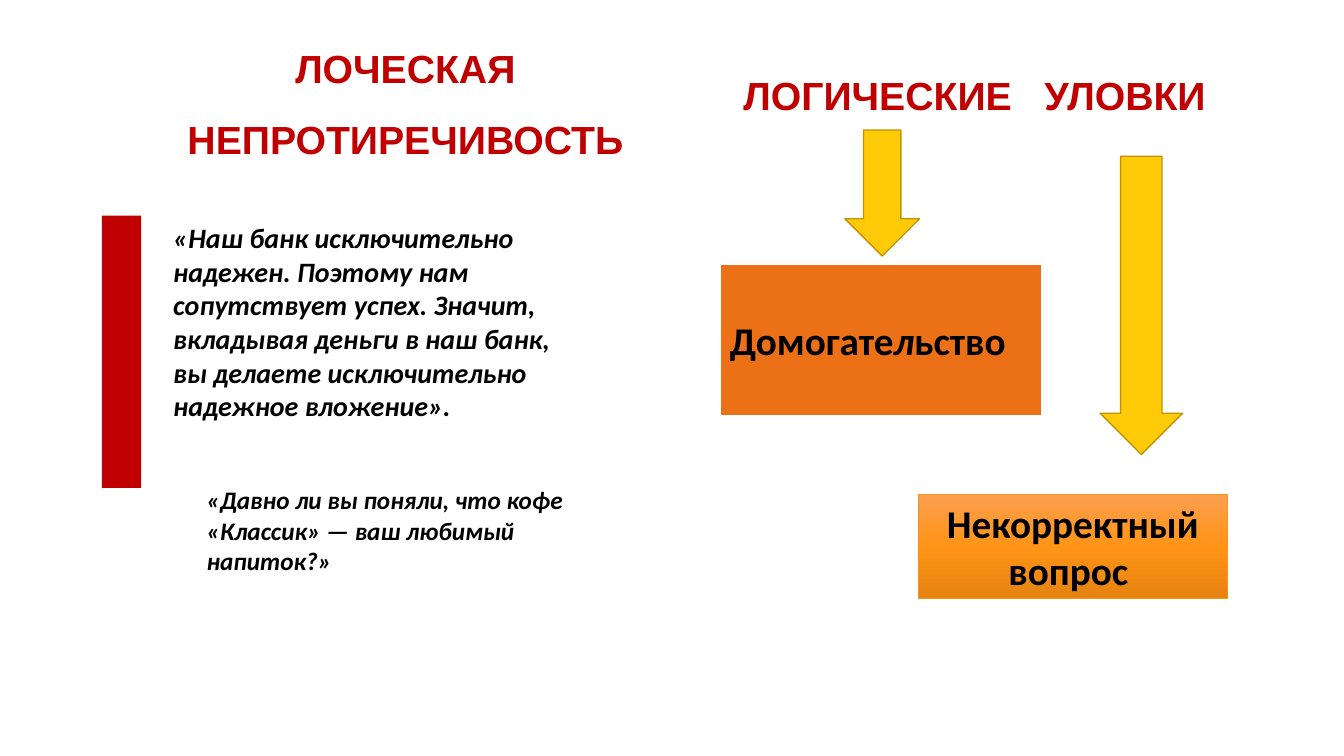
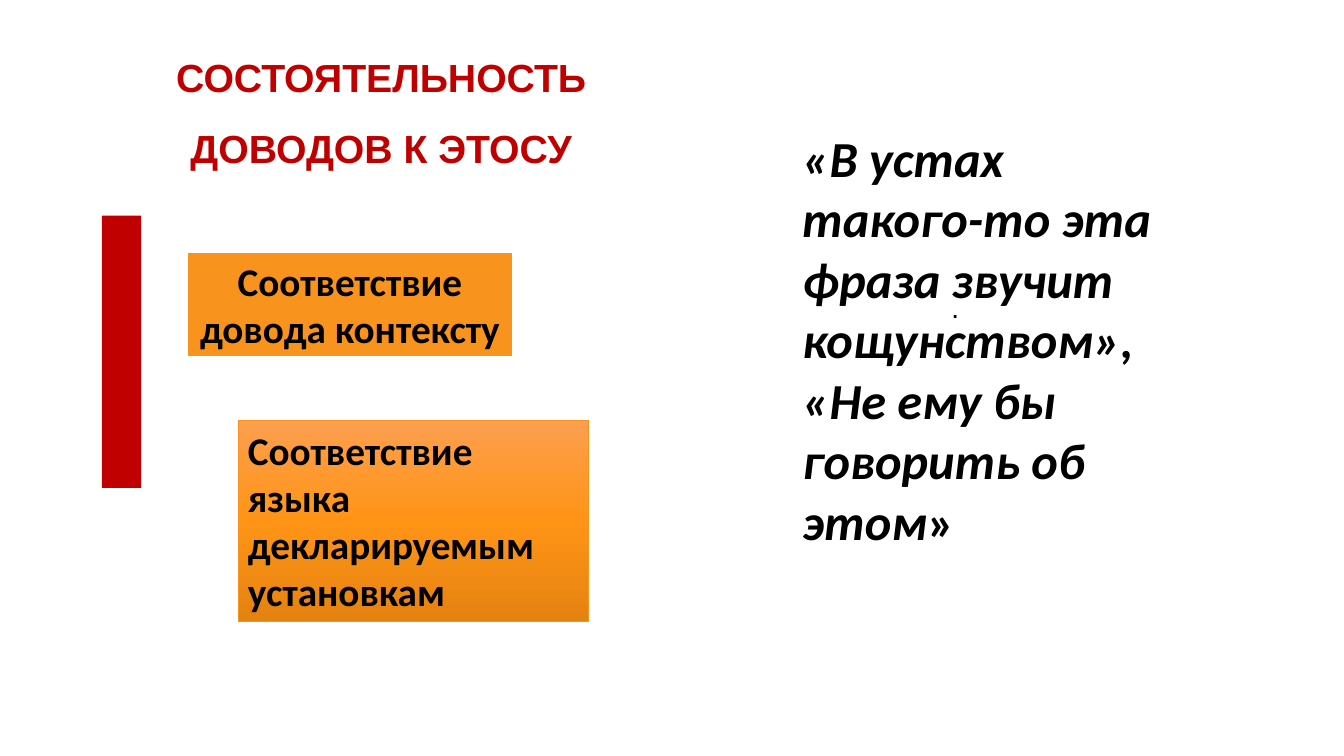
"""Build two slides on logical tricks and on arguments to ethos."""
import copy

import pptx
import pptx.dml.color
import pptx.enum.shapes
import pptx.enum.text
import pptx.oxml.ns
import pptx.util

SHAPE = pptx.enum.shapes.MSO_SHAPE
ALIGN = pptx.enum.text.PP_ALIGN
ANCHOR = pptx.enum.text.MSO_ANCHOR

THEME = {
    "red": "C00000", "black": "000000", "white": "FFFFFF",
    "orange": "F8931D", "deep": "EC7016",
    "gold": "FFCA08", "gold_edge": "BD9506",
    "gradient": ("FC9F4F", "FF9416", "E58311"),
    "head_font": "Arial", "body_font": "Calibri",
    "head": 28, "label": 28, "quote": 20, "small": 18, "large": 36,
}
CELL = 0.1
BAR = (10.1, 21.4, 3.9, 27)
WORD_GAP = 15.6

HEAD = dict(size="head", font="head_font", color="red", align=ALIGN.CENTER)
LABEL = dict(size="label", align=ALIGN.CENTER)
QUOTE = dict(italic=True)
GLOSSY = dict(fill="gradient", line="orange", width=0.5)
FLAT = dict(line="white", width=1.5)
ARROW = dict(kind=SHAPE.DOWN_ARROW, fill="gold", line="gold_edge", width=1)

SLIDES = [
    {
        "title": ("ЛОЧЕСКАЯ НЕПРОТИРЕЧИВОСТЬ", (15.7, 3.8, 49, 12.8)),
        "shapes": [
            ((91.1, 49, 30.6, 10.4), GLOSSY, "Некорректный вопрос ", LABEL),
            ((83.8, 12.9, 7.4, 12.5), ARROW, None, None),
            ((71.4, 26.2, 32, 15.1), dict(FLAT, fill="deep"),
             ["Домогате", ("л", {"italic": True}), "ьство"], dict(LABEL, align=ALIGN.LEFT)),
            ((109.1, 15.5, 8.2, 29.6), ARROW, None, None),
        ],
        "texts": [
            ((71.4, 6.6, 50.5, 5.7),
             ["ЛОГИЧЕСКИЕ", (" ", {"spacing": WORD_GAP}), "УЛОВКИ"], HEAD),
            ((16.2, 21.4, 42.3, 21.2),
             "«Наш банк исключительно надежен. Поэтому нам сопутствует успех. Значит, "
             "вкладывая деньги в наш банк, вы делаете исключительно надежное вложение».",
             dict(QUOTE, size="quote")),
            ((19.5, 47.6, 38.2, 10.1),
             "«Давно ли вы поняли, что кофе «Классик» — ваш любимый напиток?»",
             dict(QUOTE, size="small")),
        ],
    },
    {
        "title": ("СОСТОЯТЕЛЬНОСТЬ ДОВОДОВ К ЭТОСУ", (13.3, 4.4, 49, 13.1)),
        "shapes": [
            ((18.5, 25, 32.4, 10.4), dict(FLAT, fill="orange"),
             "Соответствие довода контексту", LABEL),
            ((23.6, 41.7, 34.8, 19.9), GLOSSY,
             "Соответствие языка декларируемым установкам", dict(LABEL, align=ALIGN.LEFT)),
        ],
        "texts": [
            ((68.6, 28.3, 52.3, 4.4), ".",
             dict(size="quote", font="head_font", bold=False, align=ALIGN.CENTER)),
            ((78.6, 12.1, 38.9, 43.4),
             ["«В устах такого-то эта фраза звучит кощунством», «Не ему бы говорить об этом",
              ("»", {"italic": False})], dict(QUOTE, size="large")),
        ],
    },
]


def rgb(name):
    return pptx.dml.color.RGBColor.from_string(THEME.get(name, name))


def grid(box):
    return [pptx.util.Inches(round(n * CELL, 2)) for n in box]


def write(sp, text, size, font="body_font", color="black", bold=True, italic=False,
          align=ALIGN.LEFT, anchor=ANCHOR.TOP, spacing=None):
    tf = sp.text_frame
    tf.word_wrap = True
    tf.auto_size = pptx.enum.text.MSO_AUTO_SIZE.NONE
    tf.vertical_anchor = anchor
    p = tf.paragraphs[0]
    p.alignment = align
    p.line_spacing = spacing
    for part in [text] if isinstance(text, str) else text:
        words, change = (part, {}) if isinstance(part, str) else part
        r = p.add_run()
        r.text = words
        r.font.name = THEME[font]
        r.font.size = pptx.util.Pt(THEME[size])
        r.font.color.rgb = rgb(color)
        r.font.bold = bold
        r.font.italic = change.get("italic", italic)
        if "spacing" in change:
            r.font._element.set("spc", str(round(change["spacing"] * 100)))


def shade(sp, colors):
    fill = sp.fill
    fill.gradient()
    fill.gradient_angle = 270
    stops = sp._element.spPr.find(".//" + pptx.oxml.ns.qn("a:gsLst"))
    stops.insert(1, copy.deepcopy(stops[0]))
    for i, (stop, color) in enumerate(zip(fill.gradient_stops, colors)):
        stop.position = i / (len(colors) - 1)
        stop.color.rgb = rgb(color)


def add_block(s, box, fill, line=None, width=0, kind=SHAPE.RECTANGLE):
    sp = s.shapes.add_shape(kind, *grid(box))
    sp.shadow.inherit = False
    if fill == "gradient":
        shade(sp, THEME[fill])
    else:
        sp.fill.solid()
        sp.fill.fore_color.rgb = rgb(fill)
    if line:
        sp.line.color.rgb = rgb(line)
        sp.line.width = pptx.util.Pt(width)
    else:
        sp.line.fill.background()
    return sp


def add_slide(prs, content):
    s = prs.slides.add_slide(prs.slide_layouts[5])
    title, box = content["title"]
    sp = s.shapes.title
    sp.left, sp.top, sp.width, sp.height = grid(box)
    write(sp, title, anchor=ANCHOR.BOTTOM, spacing=1.5, **HEAD)
    add_block(s, BAR, "red")
    for box, look, text, style in content["shapes"]:
        sp = add_block(s, box, **look)
        if text:
            write(sp, text, anchor=ANCHOR.MIDDLE, **style)
    for box, text, style in content["texts"]:
        write(s.shapes.add_textbox(*grid(box)), text, **style)


def main():
    prs = pptx.Presentation()
    prs.slide_width = pptx.util.Inches(13.33)
    prs.slide_height = pptx.util.Inches(7.5)
    for content in SLIDES:
        add_slide(prs, content)
    prs.save("out.pptx")


if __name__ == "__main__":
    main()
